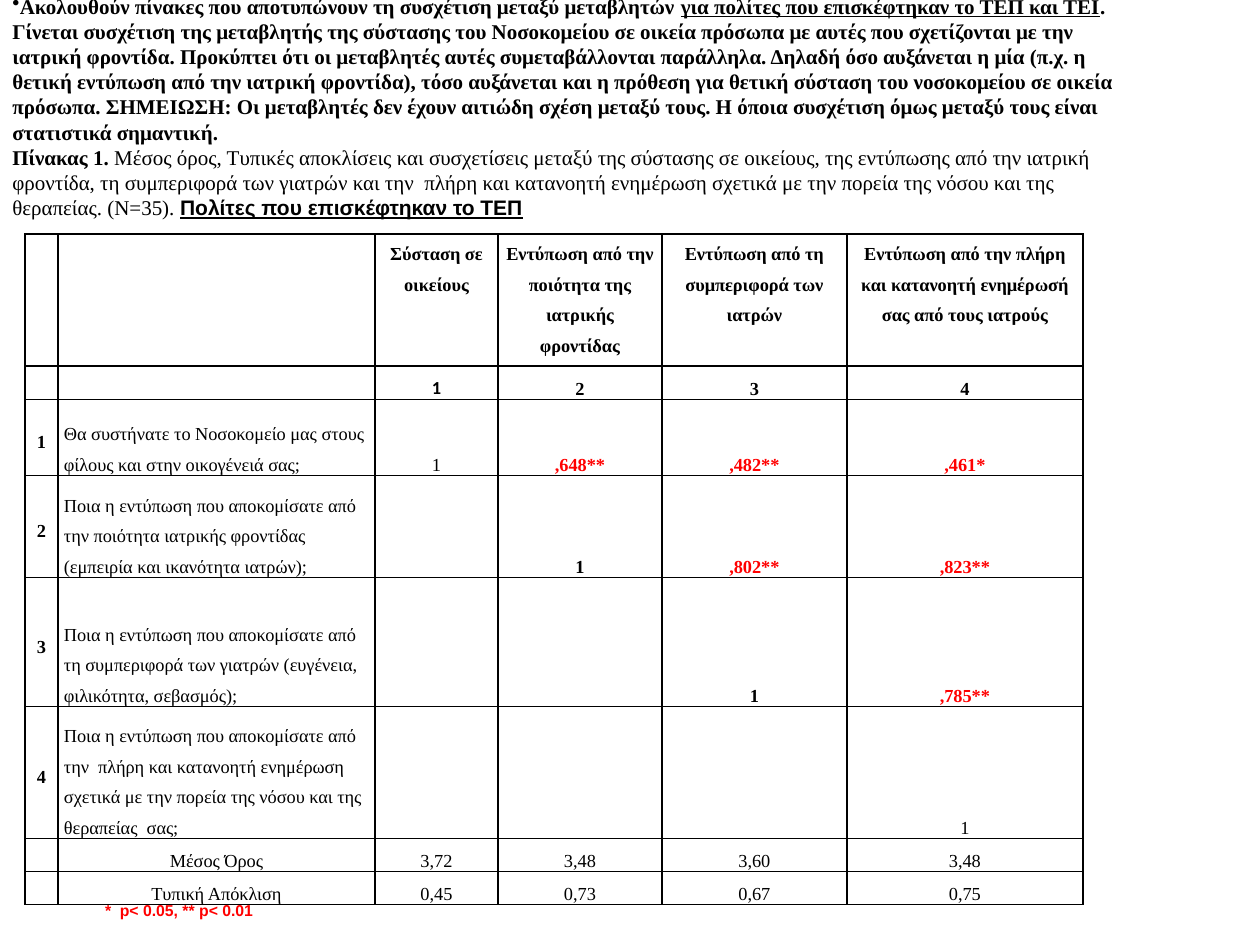
from dataclasses import dataclass

from lxml.etree import SubElement
from pptx import Presentation
from pptx.dml.color import RGBColor as RGB
from pptx.enum.text import MSO_ANCHOR as Anchor, PP_ALIGN as Align
from pptx.oxml.ns import qn
from pptx.util import Emu, Pt

SCALE = 914400 / 126
COLORS = {"ink": "000000", "mark": "FF0000"}
SERIF, SANS = "Times New Roman", "Arial"


@dataclass(frozen=True)
class Run:
    text: str
    bold: bool = True
    line: bool = False
    face: str = SERIF


@dataclass(frozen=True)
class Item:
    text: str = ""
    bold: bool = False
    color: str = "ink"
    face: str = SERIF


def px(n: int) -> Emu:
    return Emu(round(n * SCALE))


def style(font, size: float, face: str, bold: bool, color: str = "ink") -> None:
    font.size, font.name, font.bold = Pt(size), face, bold
    font.color.rgb = RGB.from_string(COLORS[color])


def add_box(slide, left: int, top: int, width: int, height: int):
    frame = slide.shapes.add_textbox(px(left), px(top), px(width), px(height)).text_frame
    frame.word_wrap = True
    return frame


def add_runs(par, runs: list[Run]) -> None:
    for part in runs:
        run = par.add_run()
        run.text = part.text
        style(run.font, 12, part.face, part.bold)
        run.font.underline = part.line


def add_edges(cell) -> None:
    props = cell._tc.get_or_add_tcPr()
    for side in "LRTB":
        edge = SubElement(props, qn(f"a:ln{side}"), w=str(Pt(1)))
        fill = SubElement(edge, qn("a:solidFill"))
        SubElement(fill, qn("a:srgbClr"), val=COLORS["ink"])


def fill_cell(cell, item: Item, anchor, align) -> None:
    add_edges(cell)
    cell.fill.background()
    cell.margin_left = cell.margin_right = px(6)
    cell.margin_top = cell.margin_bottom = 0
    cell.vertical_anchor = anchor
    par = cell.text_frame.paragraphs[0]
    par.text = item.text
    par.alignment, par.line_spacing = align, 1.5
    style(par.font, 10.5, item.face, item.bold, item.color)


def add_grid(slide, rows: list[list[Item]], widths: list[int], heights: list[int]) -> None:
    table = slide.shapes.add_table(
        len(rows), len(widths), px(25), px(234), px(sum(widths)), px(sum(heights))
    ).table
    table.first_row = table.horz_banding = False
    for col, width in zip(table.columns, widths):
        col.width = px(width)
    for r, (items, height) in enumerate(zip(rows, heights)):
        table.rows[r].height = px(height)
        for c, item in enumerate(items):
            asked = 2 <= r <= 5
            anchor = Anchor.TOP if r == 0 else Anchor.MIDDLE if asked and c == 0 else Anchor.BOTTOM
            align = Align.LEFT if asked and c == 1 else Align.CENTER
            fill_cell(table.cell(r, c), item, anchor, align)


INTRO = [
    Run("Ακολουθούν πίνακες που αποτυπώνουν τη συσχέτιση μεταξύ μεταβλητών "),
    Run("για πολίτες που επισκέφτηκαν το ΤΕΠ και ΤΕΙ", line=True),
    Run(". Γίνεται συσχέτιση της μεταβλητής της σύστασης του Νοσοκομείου σε οικεία πρόσωπα "
        "με αυτές που σχετίζονται με την ιατρική φροντίδα. Προκύπτει ότι οι μεταβλητές αυτές "
        "συμεταβάλλονται παράλληλα. Δηλαδή όσο αυξάνεται η μία (π.χ. η θετική εντύπωση από "
        "την ιατρική φροντίδα), τόσο αυξάνεται και η πρόθεση για θετική σύσταση του "
        "νοσοκομείου σε οικεία πρόσωπα. ΣΗΜΕΙΩΣΗ: Οι μεταβλητές δεν έχουν αιτιώδη σχέση "
        "μεταξύ τους. Η όποια συσχέτιση όμως μεταξύ τους είναι στατιστικά σημαντική."),
]
CAPTION = [
    Run("Πίνακας 1. "),
    Run("Μέσος όρος, Τυπικές αποκλίσεις και συσχετίσεις μεταξύ της σύστασης σε οικείους, "
        "της εντύπωσης από την ιατρική φροντίδα, τη συμπεριφορά των γιατρών και την  πλήρη "
        "και κατανοητή ενημέρωση σχετικά με την πορεία της νόσου και της θεραπείας. (N=35). ",
        bold=False),
    Run("Πολίτες που επισκέφτηκαν το ΤΕΠ", line=True, face=SANS),
]
HEADS = [
    "Σύσταση σε οικείους",
    "Εντύπωση από την ποιότητα της ιατρικής φροντίδας",
    "Εντύπωση από τη συμπεριφορά των ιατρών",
    "Εντύπωση από την πλήρη και κατανοητή ενημέρωσή σας από τους ιατρούς",
]
ASKS = [
    ("Θα συστήνατε το Νοσοκομείο μας στους φίλους και στην οικογένειά σας;",
     [",648**", ",482**", ",461*"]),
    ("Ποια η εντύπωση που αποκομίσατε από την ποιότητα ιατρικής φροντίδας "
     "(εμπειρία και ικανότητα ιατρών);", [",802**", ",823**"]),
    ("Ποια η εντύπωση που αποκομίσατε από τη συμπεριφορά των γιατρών "
     "(ευγένεια, φιλικότητα, σεβασμός);", [",785**"]),
    ("Ποια η εντύπωση που αποκομίσατε από την  πλήρη και κατανοητή ενημέρωση "
     "σχετικά με την πορεία της νόσου και της θεραπείας  σας;", []),
]
STATS = [
    ["Μέσος Όρος", "3,72", "3,48", "3,60", "3,48"],
    ["Τυπική Απόκλιση", "0,45", "0,73", "0,67", "0,75"],
]
WIDTHS = [33, 317, 123, 164, 185, 236]
HEIGHTS = [132, 33, 76, 102, 129, 132, 33, 33]


def make_rows() -> list[list[Item]]:
    """Lay out the upper triangle of correlations between headings and statistics."""
    blank = Item()
    rows = [
        [blank, blank] + [Item(head, True) for head in HEADS],
        [blank, blank] + [Item(str(n), True, face="Calibri" if n == 1 else SERIF)
                          for n in range(1, 5)],
    ]
    for i, (ask, marks) in enumerate(ASKS):
        rows.append([Item(str(i + 1), True), Item(ask)] + [blank] * i
                    + [Item("1", i in (1, 2))]
                    + [Item(mark, True, "mark") for mark in marks])
    return rows + [[blank] + [Item(text) for text in stat] for stat in STATS]


def main() -> None:
    deck = Presentation()
    deck.slide_width, deck.slide_height = px(1260), px(945)
    slide = deck.slides.add_slide(deck.slide_layouts[6])

    intro = add_box(slide, 0, -13, 1137, 267)
    first = intro.paragraphs[0]
    SubElement(first._p.get_or_add_pPr(), qn("a:buChar"), char="•")
    add_runs(first, INTRO)
    add_runs(intro.add_paragraph(), CAPTION)

    add_grid(slide, make_rows(), WIDTHS, HEIGHTS)

    note = add_box(slide, 88, 895, 344, 32)
    note.margin_left = px(17)
    par = note.paragraphs[0]
    par.text = "*  p< 0.05, ** p< 0.01"
    style(par.font, 9, SANS, True, "mark")

    deck.save("out.pptx")


if __name__ == "__main__":
    main()
